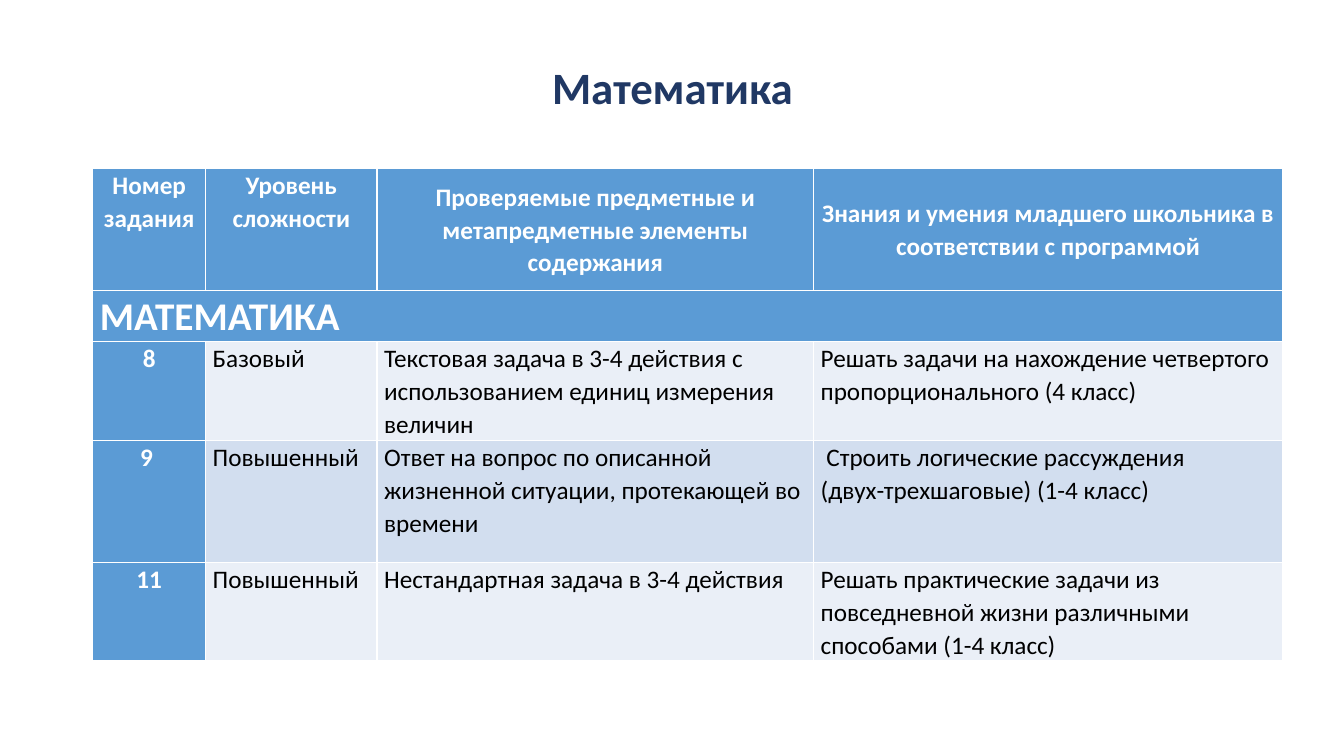
from pptx import Presentation
from pptx.dml.color import RGBColor
from pptx.enum.text import MSO_ANCHOR as Anchor, PP_ALIGN as Align
from pptx.util import Inches, Pt

WHITE = RGBColor(0xFF, 0xFF, 0xFF)
BLACK = RGBColor(0x00, 0x00, 0x00)
NAVY = RGBColor(0x20, 0x38, 0x64)
BLUE = RGBColor(0x5B, 0x9B, 0xD5)
BANDS = [RGBColor(0xEA, 0xEF, 0xF7), RGBColor(0xD2, 0xDE, 0xEF)]

FONT = "Calibri"
LEFT = 0.92
COLUMNS = [1.12, 1.7, 4.33, 4.65]
ROWS = [1.21, 0.39, 0.8, 1.21, 0.8]

HEADINGS = [
    "Номер задания",
    "Уровень сложности",
    "Проверяемые предметные и метапредметные элементы содержания",
    "Знания и умения младшего школьника в соответствии с программой",
]
SECTION = "МАТЕМАТИКА"
TASKS = [
    ["8", "Базовый",
     "Текстовая задача в 3-4 действия с использованием единиц измерения величин",
     "Решать задачи на нахождение четвертого пропорционального (4 класс)"],
    ["9 ", "Повышенный",
     "Ответ на вопрос по описанной жизненной ситуации, протекающей во времени",
     " Строить логические рассуждения\n(двух-трехшаговые) (1-4 класс)"],
    ["11", "Повышенный",
     "Нестандартная задача в 3-4 действия",
     "Решать практические задачи из повседневной жизни различными способами (1-4 класс)"],
]


def write(frame, text, size, color, bold, align, spacing):
    frame.text = text
    for paragraph in frame.paragraphs:
        paragraph.alignment = align
        paragraph.line_spacing = spacing
        font = paragraph.font
        font.name, font.size, font.bold = FONT, Pt(size), bold
        font.color.rgb = color


def add_title(slide, text):
    box = slide.shapes.add_textbox(Inches(LEFT), Inches(0.4), Inches(11.5), Inches(0.98))
    box.text_frame.word_wrap = True
    box.text_frame.vertical_anchor = Anchor.MIDDLE
    write(box.text_frame, text, 32, NAVY, True, Align.CENTER, 0.9)


def fill_cell(cell, text, fill, size=18, color=WHITE, bold=True,
              align=Align.CENTER, anchor=Anchor.TOP):
    cell.fill.solid()
    cell.fill.fore_color.rgb = fill
    cell.margin_left = cell.margin_right = Inches(0.07)
    cell.margin_top = cell.margin_bottom = 0
    cell.vertical_anchor = anchor
    write(cell.text_frame, text, size, color, bold, align, 1.07)


def add_task_table(slide):
    table = slide.shapes.add_table(
        len(ROWS), len(COLUMNS), Inches(LEFT), Inches(1.67),
        Inches(sum(COLUMNS)), Inches(sum(ROWS))).table
    for column, width in zip(table.columns, COLUMNS):
        column.width = Inches(width)
    for row, height in zip(table.rows, ROWS):
        row.height = Inches(height)

    # Header row: the two wide columns are centred vertically
    for index, heading in enumerate(HEADINGS):
        anchor = Anchor.TOP if index < 2 else Anchor.MIDDLE
        fill_cell(table.cell(0, index), heading, BLUE, anchor=anchor)

    # Section row across the whole table
    section = table.cell(1, 0)
    section.merge(table.cell(1, len(COLUMNS) - 1))
    fill_cell(section, SECTION, BLUE, size=28, align=Align.LEFT)

    # Task rows with alternating bands
    for index, (number, *details) in enumerate(TASKS):
        fill_cell(table.cell(index + 2, 0), number, BLUE)
        for column, text in enumerate(details, start=1):
            fill_cell(table.cell(index + 2, column), text, BANDS[index % 2],
                      color=BLACK, bold=False, align=Align.LEFT)


def main():
    presentation = Presentation()
    presentation.slide_width = Inches(13.33)
    presentation.slide_height = Inches(7.5)
    slide = presentation.slides.add_slide(presentation.slide_layouts[6])
    add_task_table(slide)
    add_title(slide, "Математика")
    presentation.save("out.pptx")


if __name__ == "__main__":
    main()
